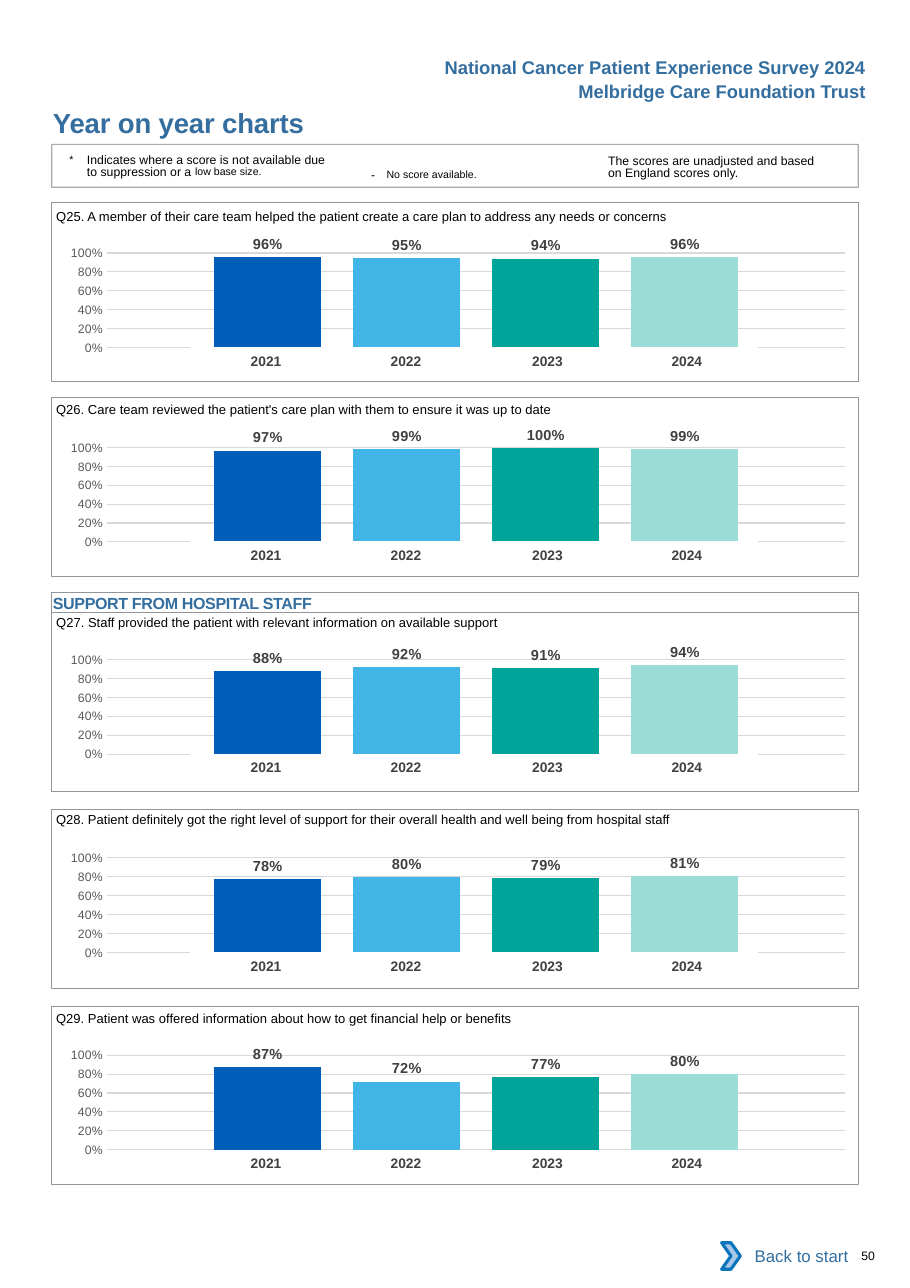
from lxml import etree
from pptx import Presentation
from pptx.chart import data as chart_data
from pptx.dml import color
from pptx.enum import chart as chart_enum, shapes, text
from pptx.oxml import ns
from pptx.util import Inches, Pt

BLUE, BLACK, GREY = "336E9F", "000000", "939598"
LEFT, WIDTH = 0.47, 7.32
PANEL_HEIGHT = 1.62
YEARS = ["2021", "2022", "2023", "2024"]
BAR_COLOURS = ["005EB8", "41B6E6", "00A499", "9CDCD7"]

# Panel top, question (drop, width), chart drop, question, scores
PANELS = [
    (1.84, (-0.04, 6.31), 0.27, "Q25. A member of their care team helped the patient create "
     "a care plan to address any needs or concerns", [0.96, 0.95, 0.94, 0.96]),
    (3.61, (-0.06, 4.73), 0.26, "Q26. Care team reviewed the patient's care plan with them "
     "to ensure it was up to date", [0.97, 0.99, 1, 0.99]),
    (5.56, (-0.07, 5.28), 0.24, "Q27. Staff provided the patient with relevant information "
     "on available support", [0.88, 0.92, 0.91, 0.94]),
    (7.35, (-0.07, 7.2), 0.25, "Q28. Patient definitely got the right level of support for "
     "their overall health and well being from hospital staff", [0.78, 0.8, 0.79, 0.81]),
    (9.13, (-0.05, 4.43), 0.26, "Q29. Patient was offered information about how to get "
     "financial help or benefits", [0.87, 0.72, 0.77, 0.8]),
]


def rgb(value):
    return color.RGBColor.from_string(value)


def apply(target, **values):
    for name, value in values.items():
        setattr(target, name, value)


def style_font(font, size, colour=BLACK, bold=False):
    apply(font, name="Arial", size=Pt(size), bold=bold)
    font.color.rgb = rgb(colour)


def fill_frame(frame, runs, insets=(0, 0, 0, 0), wrap=True, align="LEFT",
               anchor="TOP", spacing=None, before=0):
    """Each run is (text, size, colour, bold, extra run attributes)."""
    sides = ("margin_left", "margin_top", "margin_right", "margin_bottom")
    apply(frame, word_wrap=wrap, auto_size=text.MSO_AUTO_SIZE.NONE,
          vertical_anchor=text.MSO_ANCHOR[anchor],
          **{side: Inches(inset) for side, inset in zip(sides, insets)})
    paragraph = frame.paragraphs[0]
    apply(paragraph, alignment=text.PP_ALIGN[align], line_spacing=spacing,
          space_before=Pt(before))
    for words, size, colour, bold, extras in runs:
        run = paragraph.add_run()
        run.text = words
        style_font(run.font, size, colour, bold)
        for name, value in extras.items():
            run.font._element.set(name, str(value))
    return paragraph


def add_text(slide, box, runs, **layout):
    shape = slide.shapes.add_textbox(*map(Inches, box))
    return fill_frame(shape.text_frame, runs, **layout)


def add_box(slide, box, kind="RECTANGLE", fill=None, line=None, weight=0.5):
    shape = slide.shapes.add_shape(shapes.MSO_SHAPE[kind], *map(Inches, box))
    shape.shadow.inherit = False
    if fill:
        shape.fill.solid()
        shape.fill.fore_color.rgb = rgb(fill)
    else:
        shape.fill.background()
    if line:
        shape.line.color.rgb = rgb(line)
        shape.line.width = Pt(weight)
    else:
        shape.line.fill.background()
    return shape


def add_header(slide):
    lines = [((3.92, 0.46, 4.04, 0.3), "National Cancer Patient Experience Survey 2024"),
             ((5.16, 0.68, 2.8, 0.3), "Melbridge Care Foundation Trust")]
    for box, words in lines:
        add_text(slide, box, [(words, 12, BLUE, True, {})],
                 insets=(0.1, 0.05, 0.1, 0.05), wrap=False, align="RIGHT")
    title = slide.shapes.title
    apply(title, left=Inches(LEFT), top=Inches(0.96), width=Inches(4.5), height=Inches(0.3))
    fill_frame(title.text_frame, [("Year on year charts", 18, BLUE, True, {"spc": -10})],
               insets=(0.01, 0, 0, 0))


def add_key(slide, left, top):
    spacing = Pt(8.1)
    add_text(slide, (left + 5.05, top + 0.07, 2.01, 0.27),
             [("The scores are unadjusted and based on England scores only.", 8, BLACK, False, {})],
             insets=(0, 0.03, 0, 0), spacing=spacing, before=2.5)
    add_text(slide, (left + 2.8, top + 0.1, 1.83, 0.24),
             [("- ", 8, BLACK, False, {"spc": 260}),
              ("No score available.", 12, BLACK, False, {"baseline": 3000})],
             insets=(0.1, 0.05, 0.1, 0.05), before=2.1)
    note = add_text(slide, (left + 0.16, top + 0.07, 2.4, 0.27),
                    [("*\t", 12, BLACK, False, {"baseline": 3000}),
                     ("Indicates where a score is not available due to suppression or a ",
                      8, BLACK, False, {}),
                     ("low base size.", 12, BLACK, False, {"baseline": 7000})],
                    insets=(0, 0.03, 0, 0), spacing=spacing, before=2.5)
    properties = note._p.get_or_add_pPr()
    properties.set("marL", str(Inches(0.16)))
    properties.set("indent", str(-Inches(0.16)))
    frame = add_box(slide, (left, top, WIDTH, 0.39), line=GREY, weight=0.75)
    line_colour = frame.line._ln.find(".//" + ns.qn("a:srgbClr"))
    etree.SubElement(line_colour, ns.qn("a:alpha"), val="80000")


def add_score_chart(slide, box, scores):
    values = chart_data.CategoryChartData(number_format="0%")
    values.categories = ["1"]
    for number, score in enumerate(scores, 1):
        values.add_series(f"Series {number}", [score])
    chart = slide.shapes.add_chart(chart_enum.XL_CHART_TYPE.COLUMN_CLUSTERED,
                                   *map(Inches, box), values).chart
    apply(chart, has_legend=False, has_title=False)
    apply(chart.font, name="Calibri", size=Pt(10))
    chart.category_axis.visible = False

    # Percentage axis and gridlines
    axis = chart.value_axis
    apply(axis, minimum_scale=0, maximum_scale=1, major_unit=0.2, has_major_gridlines=True,
          major_tick_mark=chart_enum.XL_TICK_MARK.NONE)
    apply(axis.tick_labels, number_format="0%", number_format_is_linked=False)
    style_font(axis.tick_labels.font, 8, "595959")
    axis.format.line.fill.background()
    axis.major_gridlines.format.line.color.rgb = rgb("D9D9D9")
    axis.major_gridlines.format.line.width = Pt(0.75)

    # Bars and their labels
    plot = chart.plots[0]
    apply(plot, gap_width=200, overlap=-30, vary_by_categories=False)
    for series, colour in zip(plot.series, BAR_COLOURS):
        series.format.fill.solid()
        series.format.fill.fore_color.rgb = rgb(colour)
        labels = series.data_labels
        apply(labels, show_value=True, number_format="0%", number_format_is_linked=False,
              position=chart_enum.XL_LABEL_POSITION.OUTSIDE_END)
        style_font(labels.font, 9.5, "404040", True)

    # Fixed inner plot area
    area = chart._chartSpace.chart.plotArea
    for old in area.findall(ns.qn("c:layout")):
        area.remove(old)
    layout = etree.Element(ns.qn("c:layout"))
    manual = etree.SubElement(layout, ns.qn("c:manualLayout"))
    settings = {"layoutTarget": "inner", "xMode": "edge", "yMode": "edge",
                "x": "0.08", "y": "0.145", "w": "0.915", "h": "0.666"}
    for name, value in settings.items():
        etree.SubElement(manual, ns.qn("c:" + name), val=value)
    area.insert(0, layout)


def add_years(slide, left, top):
    widths, right_insets = [1.27, 1.27, 1.34, 1.27], [0, 0, 0.04, 0.12]
    table = slide.shapes.add_table(1, len(YEARS), Inches(left), Inches(top),
                                   Inches(sum(widths)), Inches(0.27)).table
    apply(table, first_row=False, horz_banding=False)
    for index, year in enumerate(YEARS):
        table.columns[index].width = Inches(widths[index])
        cell = table.cell(0, index)
        cell.fill.background()
        apply(cell, margin_left=Inches(0.1), margin_right=Inches(right_insets[index]))
        paragraph = cell.text_frame.paragraphs[0]
        paragraph.text = year
        paragraph.alignment = text.PP_ALIGN.CENTER
        style_font(paragraph.runs[0].font, 9, "414042", True)


def add_panel(slide, left, top, question_place, chart_drop, question, scores):
    drop, question_width = question_place
    add_score_chart(slide, (left - 0.08, top + chart_drop, WIDTH, 1.29), scores)
    add_years(slide, left + 1.26, top + chart_drop + 1.05)
    add_box(slide, (left, top, WIDTH, PANEL_HEIGHT), line=GREY)
    add_text(slide, (left + 0.03, top + drop, question_width, 0.24),
             [(question, 8.5, BLACK, False, {})], insets=(0.01, 0.09, 0, 0))


def add_section_heading(slide, left, top):
    bar = add_box(slide, (left, top, WIDTH, 0.18), line=GREY)
    fill_frame(bar.text_frame, [("SUPPORT FROM HOSPITAL STAFF", 10.5, BLUE, True, {"spc": -20})],
               insets=(0.01, 0.01, 0, 0))


def add_footer(slide, left, top):
    button = add_box(slide, (left, top, 1.18, 0.42), fill="FFFFFF")
    fill_frame(button.text_frame, [("Back to start", 11, BLUE, False, {})],
               insets=(0.1, 0.05, 0.1, 0.05), align="RIGHT", anchor="MIDDLE")
    add_box(slide, (left - 0.07, top + 0.09, 0.17, 0.24), "CHEVRON", "A8C7E9", "0A74BB", 2)
    add_text(slide, (left + 1.1, top + 0.14, 0.51, 0.13), [("50", 8, BLACK, False, {})],
             insets=(0.1, 0, 0, 0))


def main():
    presentation = Presentation()
    apply(presentation, slide_width=Inches(8.26), slide_height=Inches(11.69))
    slide = presentation.slides.add_slide(presentation.slide_layouts[5])
    add_header(slide)
    add_key(slide, LEFT, 1.31)
    for panel in PANELS:
        add_panel(slide, LEFT, *panel)
    add_section_heading(slide, LEFT, 5.38)
    add_footer(slide, 6.62, 11.19)
    presentation.save("out.pptx")


if __name__ == "__main__":
    main()
